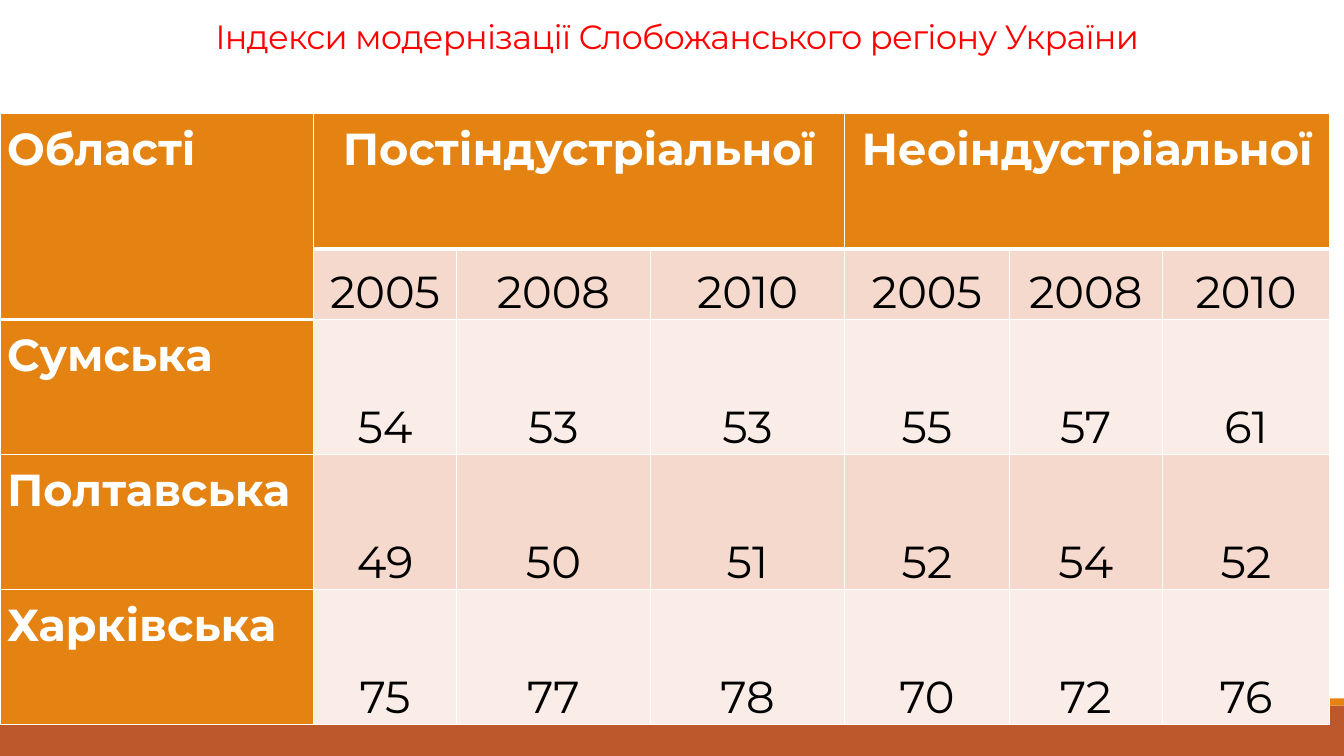
from lxml.etree import SubElement
from pptx import Presentation
from pptx.dml.color import RGBColor
from pptx.enum.shapes import MSO_SHAPE
from pptx.enum.text import MSO_ANCHOR, MSO_AUTO_SIZE, PP_ALIGN
from pptx.oxml.ns import qn
from pptx.util import Inches, Pt

ORANGE, RUST, WHITE, BLACK, RED = "E48312", "BD582C", "FFFFFF", "000000", "FF0000"
BANDS = ("FAEDE7", "F5D9CC")
COLUMN_WIDTHS = (3.11, 1.42, 1.92, 1.93, 1.63, 1.52, 1.66)
ROW_HEIGHTS = (1.34, 0.7, 1.34, 1.34, 1.34)
ROWS = (
    ("Області", "Постіндустріальної", "", "", "Неоіндустріальної", "", ""),
    ("", "2005", "2008", "2010", "2005", "2008", "2010"),
    ("Сумська", "54", "53", "53", "55", "57", "61"),
    ("Полтавська", "49", "50", "51", "52", "54", "52"),
    ("Харківська", "75", "77", "78", "70", "72", "76"),
)
MERGES = ((0, 0, 1, 0), (0, 1, 0, 3), (0, 4, 0, 6))


def color(value):
    """Turn a hex string into a colour."""
    return RGBColor.from_string(value)


class SlideBuilder:
    """Holds the style and the current slide."""

    font_name = "Montserrat"

    def __init__(self, slide):
        """Keep the slide to build on."""
        self.slide = slide

    def style(self, paragraph, size, font_color, bold=False, align=PP_ALIGN.CENTER, spacing=1.15):
        """Format one paragraph."""
        paragraph.alignment = align
        paragraph.line_spacing = spacing
        font = paragraph.font
        font.name, font.size, font.bold = self.font_name, Pt(size), bold
        font.color.rgb = color(font_color)

    def bar(self, top, height, fill):
        """Draw a band across the full slide width."""
        shape = self.slide.shapes.add_shape(
            MSO_SHAPE.RECTANGLE, 0, Inches(top), Inches(13.33), Inches(height))
        shape.shadow.inherit = False
        shape.fill.solid()
        shape.fill.fore_color.rgb = color(fill)
        shape.line.fill.background()

    def title(self, text):
        """Fill and place the title placeholder."""
        shape = self.slide.shapes.title
        shape.left, shape.top = Inches(0.1), Inches(0)
        shape.width, shape.height = Inches(13.23), Inches(0.61)
        frame = shape.text_frame
        frame.text = text
        frame.word_wrap = True
        frame.auto_size = MSO_AUTO_SIZE.NONE
        frame.vertical_anchor = MSO_ANCHOR.BOTTOM
        paragraph = frame.paragraphs[0]
        self.style(paragraph, 24, RED, spacing=0.85)
        paragraph.runs[0].font._element.set("spc", "-50")

    def borders(self, cell, top, bottom):
        """Give a cell white borders, with top and bottom widths in points."""
        properties = cell._tc.get_or_add_tcPr()
        for side, width in (("L", 1), ("R", 1), ("T", top), ("B", bottom)):
            line = SubElement(properties, qn(f"a:ln{side}"), w=str(Pt(width)))
            fill = SubElement(line, qn("a:solidFill"))
            SubElement(fill, qn("a:srgbClr"), val=WHITE)

    def cell(self, cell, text, row, column):
        """Format a cell by its place in the table."""
        header = row == 0 or column == 0
        last_header_row = 1 if column == 0 else 0
        below_header = row == last_header_row + 1
        above_body = row == last_header_row or cell.is_merge_origin
        self.borders(cell, 3 if below_header else 1, 3 if above_body else 1)
        cell.fill.solid()
        cell.fill.fore_color.rgb = color(ORANGE if header else BANDS[row % 2])
        cell.margin_left = cell.margin_right = Inches(0.07)
        cell.margin_top = cell.margin_bottom = 0
        cell.vertical_anchor = MSO_ANCHOR.TOP if header else MSO_ANCHOR.BOTTOM
        cell.text = text
        self.style(cell.text_frame.paragraphs[0], 32, WHITE if header else BLACK,
                   header, PP_ALIGN.CENTER if column else PP_ALIGN.LEFT)

    def table(self, left, top):
        """Draw the table of indices."""
        table = self.slide.shapes.add_table(
            len(ROWS), len(COLUMN_WIDTHS), Inches(left), Inches(top),
            Inches(sum(COLUMN_WIDTHS)), Inches(sum(ROW_HEIGHTS))).table
        for column, width in zip(table.columns, COLUMN_WIDTHS):
            column.width = Inches(width)
        for row, height in zip(table.rows, ROW_HEIGHTS):
            row.height = Inches(height)
        for first_row, first_column, last_row, last_column in MERGES:
            table.cell(first_row, first_column).merge(table.cell(last_row, last_column))
        for row, texts in enumerate(ROWS):
            for column, text in enumerate(texts):
                self.cell(table.cell(row, column), text, row, column)


def main():
    """Build and save the presentation."""
    presentation = Presentation()
    presentation.slide_width, presentation.slide_height = Inches(13.33), Inches(7.5)
    builder = SlideBuilder(presentation.slides.add_slide(presentation.slide_layouts[5]))
    builder.bar(7, 0.5, RUST)
    builder.bar(6.93, 0.07, ORANGE)
    builder.title("Індекси модернізації Слобожанського регіону України")
    builder.table(0, 1.13)
    presentation.save("out.pptx")


if __name__ == "__main__":
    main()
